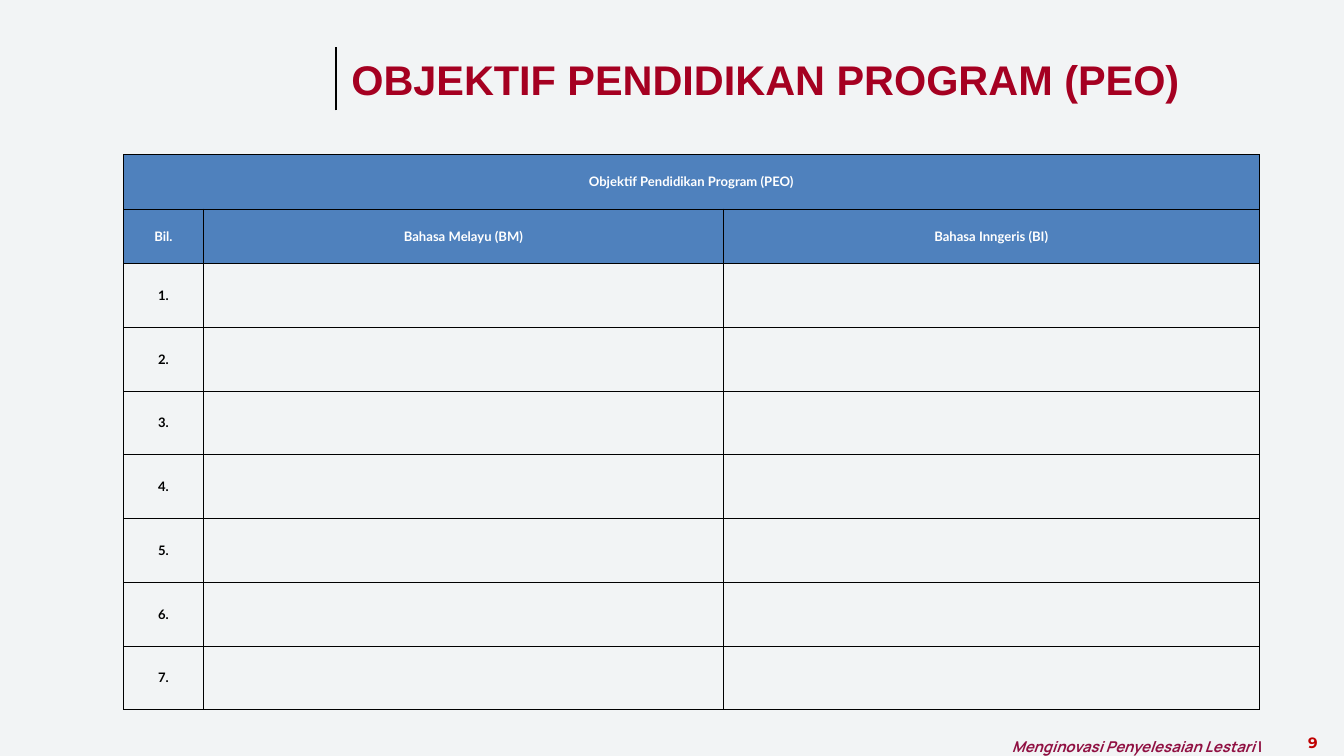
from dataclasses import dataclass

import pptx
import pptx.dml.color
import pptx.enum.shapes
import pptx.enum.text
import pptx.oxml
import pptx.oxml.ns
import pptx.util

Cm = pptx.util.Cm
Pt = pptx.util.Pt
CENTER = pptx.enum.text.PP_ALIGN.CENTER
MIDDLE = pptx.enum.text.MSO_ANCHOR.MIDDLE


@dataclass(frozen=True)
class Theme:
    background: str = "F2F4F5"
    line: str = "000000"
    header_fill: str = "4F81BD"
    title: tuple = ("Arial", 44.4, "A50021")
    motto: tuple = ("Manrope", 16, "901042")
    page_number: tuple = ("Montserrat", 16, "C00000")
    header: tuple = ("Lato", 14, "FFFFFF")
    number: tuple = ("Lato", 14, "000000")


THEME = Theme()


def rgb(value):
    return pptx.dml.color.RGBColor.from_string(value)


def set_all(obj, values):
    for name, value in values.items():
        setattr(obj, name, value)


def add_run(p, text, style, italic=False):
    name, size, color = style
    r = p.add_run()
    r.text = text
    set_all(r.font, {"name": name, "size": Pt(size), "bold": True, "italic": italic})
    r.font.color.rgb = rgb(color)


def add_text(s, box, runs, style, frame=None, paragraph=None):
    """Add a one-paragraph text box; runs are (text, italic) pairs."""
    tf = s.shapes.add_textbox(*map(Cm, box)).text_frame
    set_all(tf, {"word_wrap": True, **(frame or {})})
    p = tf.paragraphs[0]
    set_all(p, paragraph or {})
    for text, italic in runs:
        add_run(p, text, style, italic)


def add_rule(s, x, top, bottom):
    line = s.shapes.add_connector(
        pptx.enum.shapes.MSO_CONNECTOR.STRAIGHT, Cm(x), Cm(bottom), Cm(x), Cm(top))
    line.line.width = Pt(3)
    line.line.color.rgb = rgb(THEME.line)
    line._element.spPr.append(pptx.oxml.parse_xml(
        f"<a:effectLst {pptx.oxml.ns.nsdecls('a')}/>"))


def add_borders(cell):
    tcPr = cell._tc.get_or_add_tcPr()
    for i, side in enumerate(("lnL", "lnR", "lnT", "lnB")):
        tcPr.insert(i, pptx.oxml.parse_xml(
            f'<a:{side} {pptx.oxml.ns.nsdecls("a")} w="12700"><a:solidFill>'
            f'<a:srgbClr val="{THEME.line}"/></a:solidFill></a:{side}>'))


def fill_cell(cell, text, is_header):
    if is_header:
        cell.fill.solid()
        cell.fill.fore_color.rgb = rgb(THEME.header_fill)
    else:
        cell.fill.background()
    add_borders(cell)
    cell.vertical_anchor = MIDDLE
    if text:
        p = cell.text_frame.paragraphs[0]
        p.alignment = CENTER
        add_run(p, text, THEME.header if is_header else THEME.number)


def add_objectives_table(s, left, top, widths, header_height, row_height, count):
    rows = [["Objektif Pendidikan Program (PEO)", "", ""],
            ["Bil.", "Bahasa Melayu (BM)", "Bahasa Inngeris (BI)"]]
    header_rows = len(rows)
    rows += [[f"{n}.", "", ""] for n in range(1, count + 1)]
    heights = [header_height] * header_rows + [row_height] * count

    table = s.shapes.add_table(len(rows), len(widths), Cm(left), Cm(top),
                               Cm(sum(widths)), Cm(sum(heights))).table
    set_all(table, {"first_row": False, "horz_banding": False})
    for column, width in zip(table.columns, widths):
        column.width = Cm(width)
    table.cell(0, 0).merge(table.cell(0, len(widths) - 1))
    for i, (texts, height) in enumerate(zip(rows, heights)):
        table.rows[i].height = Cm(height)
        for j, text in enumerate(texts):
            fill_cell(table.cell(i, j), text, i < header_rows)


def main():
    prs = pptx.Presentation()
    set_all(prs, {"slide_width": Cm(50.8), "slide_height": Cm(28.58)})
    s = prs.slides.add_slide(prs.slide_layouts[6])
    s.background.fill.solid()
    s.background.fill.fore_color.rgb = rgb(THEME.background)

    no_margins = dict.fromkeys(
        ("margin_left", "margin_top", "margin_right", "margin_bottom"), 0)
    add_text(s, (38.25, 27.61, 10.67, 0.97),
             [("Menginovasi Penyelesaian Lestari ", True), ("|", False)],
             THEME.motto, no_margins, {"line_spacing": 1.4})
    add_rule(s, 12.7, 1.78, 4.17)
    add_text(s, (48.44, 27.61, 2.36, 0.94), [("9", False)],
             THEME.page_number, paragraph={"alignment": CENTER})
    add_text(s, (13.03, 1.75, 32.46, 3.18),
             [("OBJEKTIF PENDIDIKAN PROGRAM (PEO)", False)],
             THEME.title, {"margin_top": Cm(0.3)})
    add_objectives_table(s, 4.67, 5.84, (3.02, 19.66, 20.24), 2.06, 2.41, 7)
    prs.save("out.pptx")


if __name__ == "__main__":
    main()
